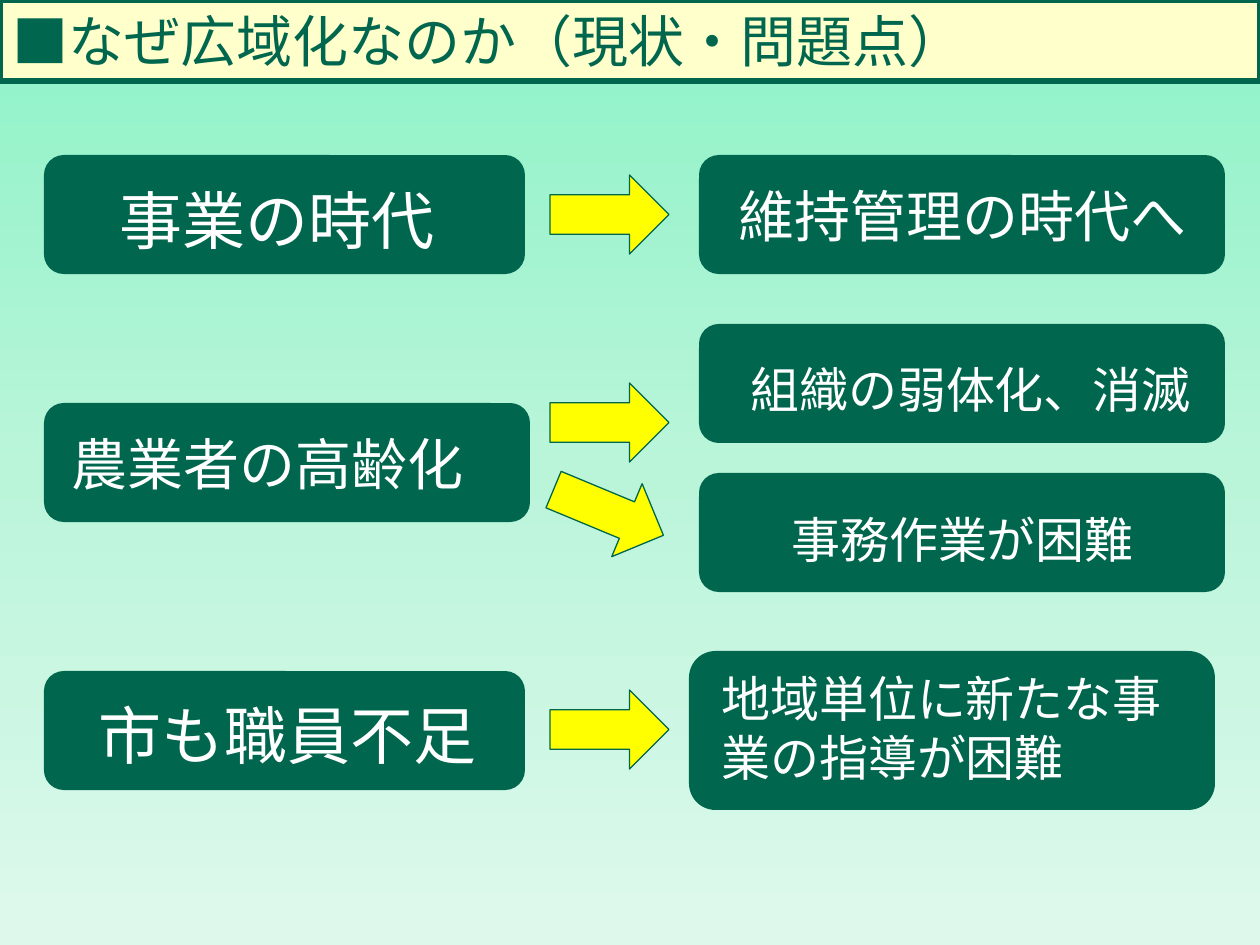
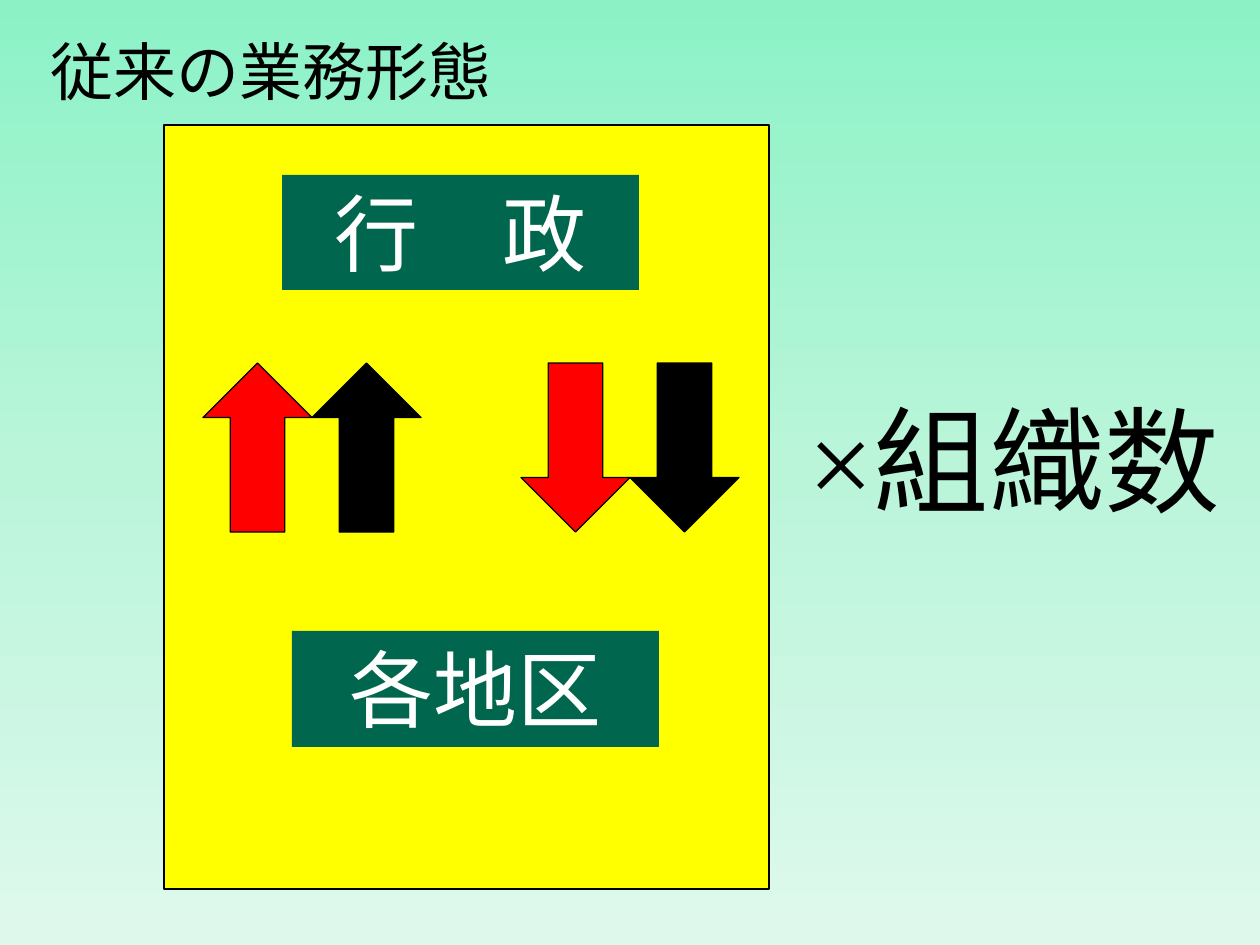
"""Build two slides on why irrigation work is being run over wider areas."""
from copy import deepcopy

from pptx import Presentation
from pptx.dml.color import RGBColor as Rgb
from pptx.enum.shapes import MSO_SHAPE as Shape
from pptx.enum.text import MSO_ANCHOR as Anchor, MSO_AUTO_SIZE as AutoSize, PP_ALIGN as Align
from pptx.oxml.ns import qn
from pptx.util import Emu, Pt

COLORS = {
    "green": "00664D", "cream": "FFFFCC", "yellow": "FFFF00", "red": "FF0000",
    "black": "000000", "white": "FFFFFF",
    "sky": "8CF2C6", "middle": "BAF5DA", "ground": "DEF9EC",
}
BACKDROP = [("sky", 0), ("middle", 0.5), ("ground", 1)]
FONT = "Times New Roman"
EMU_PER_PX = 914400 / 126
SLIDE_SIZE = (1260, 945)

HEADING = ("■なぜ広域化なのか（現状・問題点）", (0, 0, 1260, 81))
CARD_HEIGHT = 119
LEFT, RIGHT = 44, 699
CARDS = [
    ((LEFT, 155, 481, CARD_HEIGHT), "事業の時代", (84, 175, 387, 89), 36, Align.CENTER),
    ((RIGHT, 155, 526, CARD_HEIGHT), "維持管理の時代へ", (709, 175, 507, 81), 32, Align.CENTER),
    ((LEFT, 403, 486, CARD_HEIGHT), "農業者の高齢化", (54, 423, 427, 81), 32, Align.CENTER),
    ((RIGHT, 324, 526, CARD_HEIGHT), "組織の弱体化、消滅", (738, 353, 507, 72), 28, Align.LEFT),
    ((RIGHT, 473, 526, CARD_HEIGHT), "事務作業が困難", (709, 503, 507, 72), 28, Align.CENTER),
    ((LEFT, 671, 481, CARD_HEIGHT), "市も職員不足", (74, 690, 427, 89), 36, Align.CENTER),
    ((689, 651, 526, 159), "地域単位に新たな事業の指導が困難", (709, 662, 507, 131), 28, Align.LEFT),
]
CAUSE_ARROWS = [(550, 175, 0), (550, 383, 0), (549, 473, 22.6), (550, 690, 0)]
CAUSE_ARROW_SIZE = (119, 79)

SUBJECT = ("従来の業務形態", (35, 26, 471, 89))
PANEL = (164, 125, 605, 764)
PARTIES = [("行　政", (282, 175, 357, 115)), ("各地区", (292, 631, 367, 116))]
FLOWS = [(Shape.UP_ARROW, 203), (Shape.DOWN_ARROW, 521)]
FLOW_COLORS = ["red", "black"]
FLOW_TOP, FLOW_WIDTH, FLOW_HEIGHT = 363, 109, 169
MULTIPLIER = ("×組織数", (769, 383, 491, 152))


def px(values):
    return [Emu(round(value * EMU_PER_PX)) for value in values]


def rgb(name):
    return Rgb.from_string(COLORS[name])


def add_page(deck):
    page = deck.slides.add_slide(deck.slide_layouts[6])
    fill = page.background.fill
    fill.gradient()
    fill.gradient_angle = 270
    stop_list = page.element.find(".//" + qn("a:gsLst"))
    stop_list.append(deepcopy(stop_list[0]))
    for stop, (color, position) in zip(fill.gradient_stops, BACKDROP):
        stop.color.rgb = rgb(color)
        stop.position = position
    return page


def write(box, text, size, color="white", align=Align.CENTER, wrap=True):
    frame = box.text_frame
    settings = {"word_wrap": wrap, "auto_size": AutoSize.SHAPE_TO_FIT_TEXT,
                "vertical_anchor": Anchor.TOP}
    for name, value in settings.items():
        setattr(frame, name, value)
    para = frame.paragraphs[0]
    para.alignment = align
    span = para.add_run()
    span.text = text
    for name, value in {"name": FONT, "size": Pt(size)}.items():
        setattr(span.font, name, value)
    span.font.color.rgb = rgb(color)


def add_text(page, text, place, size, **style):
    write(page.shapes.add_textbox(*px(place)), text, size, **style)


def add_box(page, kind, place, fill, line=None, width=0.75):
    box = page.shapes.add_shape(kind, *px(place))
    box.shadow.inherit = False
    box.fill.solid()
    box.fill.fore_color.rgb = rgb(fill)
    if line:
        box.line.color.rgb = rgb(line)
        box.line.width = Pt(width)
    else:
        box.line.fill.background()
    return box


def build_reasons(deck):
    page = add_page(deck)
    text, place = HEADING
    band = add_box(page, Shape.RECTANGLE, place, "cream", "green", 3)
    write(band, text, 32, "green", Align.LEFT)
    for card, text, place, size, align in CARDS:
        add_box(page, Shape.ROUNDED_RECTANGLE, card, "green")
        add_text(page, text, place, size, align=align)
    for left, top, turn in CAUSE_ARROWS:
        place = (left, top, *CAUSE_ARROW_SIZE)
        add_box(page, Shape.RIGHT_ARROW, place, "yellow", "green").rotation = turn


def build_workflow(deck):
    page = add_page(deck)
    add_text(page, *SUBJECT, 36, color="black", wrap=False)
    add_box(page, Shape.RECTANGLE, PANEL, "yellow", "black")
    for text, place in PARTIES:
        write(add_box(page, Shape.RECTANGLE, place, "green"), text, 48)
    for kind, left in FLOWS:
        for index, color in enumerate(FLOW_COLORS):
            place = (left + index * FLOW_WIDTH, FLOW_TOP, FLOW_WIDTH, FLOW_HEIGHT)
            add_box(page, kind, place, color, "black")
    add_text(page, *MULTIPLIER, 66, color="black")


def main():
    deck = Presentation()
    deck.slide_width, deck.slide_height = px(SLIDE_SIZE)
    build_reasons(deck)
    build_workflow(deck)
    deck.save("out.pptx")


if __name__ == "__main__":
    main()
